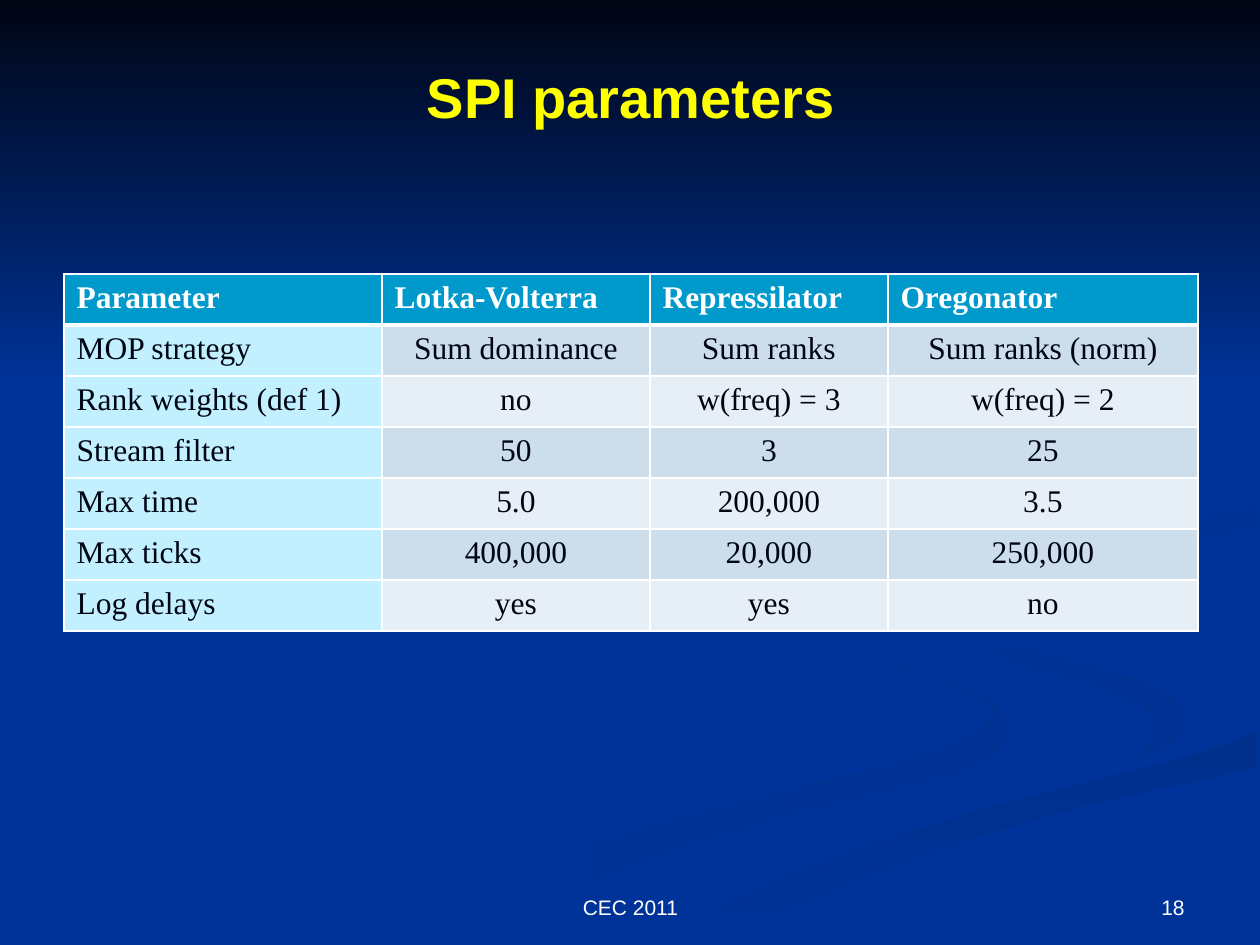
"""Build the SPI parameters slide: a table over a blue background with ribbons."""
from lxml import etree
from pptx import Presentation
from pptx.dml.color import RGBColor
from pptx.enum.text import MSO_ANCHOR, PP_ALIGN
from pptx.oxml.ns import qn
from pptx.util import Pt

PX = 914400 / 126
WIDTH, HEIGHT = 1260, 945
LEFT, CENTER, RIGHT = PP_ALIGN.LEFT, PP_ALIGN.CENTER, PP_ALIGN.RIGHT
MIDDLE, BOTTOM = MSO_ANCHOR.MIDDLE, MSO_ANCHOR.BOTTOM

BLUE = RGBColor(0x00, 0x33, 0x99)
NIGHT = RGBColor(0x00, 0x05, 0x14)
YELLOW = RGBColor(0xFF, 0xFF, 0x00)
WHITE = RGBColor(0xFF, 0xFF, 0xFF)
TEAL = RGBColor(0x00, 0x99, 0xCC)
ICE = RGBColor(0xC2, 0xF0, 0xFF)
BANDS = (RGBColor(0xCC, 0xDE, 0xEC), RGBColor(0xE7, 0xEF, 0xF6))

TITLE = {"name": "Arial", "size": Pt(32), "bold": True}
SMALL = {"name": "Arial", "size": Pt(12), "bold": False}
HEAD = {"name": "Times New Roman", "size": Pt(18), "bold": True}
BODY = {**HEAD, "bold": False}

COLS = (318, 268, 238, 310)
ROW = 51
ROWS = (
    ("Parameter", "Lotka-Volterra", "Repressilator", "Oregonator"),
    ("MOP strategy", "Sum dominance", "Sum ranks", "Sum ranks (norm)"),
    ("Rank weights (def 1)", "no", "w(freq) = 3", "w(freq) = 2"),
    ("Stream filter", "50", "3", "25"),
    ("Max time", "5.0", "200,000", "3.5"),
    ("Max ticks", "400,000", "20,000", "250,000"),
    ("Log delays", "yes", "yes", "no"),
)

LONG = (
    (984, 697), (954, 684), (901, 665), (859, 654), (809, 639), (774, 625),
    (740, 606), (726, 591), (725, 578), (718, 592), (726, 605), (747, 619),
    (795, 636), (856, 654), (900, 668), (948, 684), (978, 697), (987, 704),
    (990, 713), (987, 723), (975, 735), (956, 743), (916, 759), (862, 772),
    (776, 793), (679, 818), (577, 849), (474, 891), (378, 944), (455, 944),
    (543, 900), (629, 866), (711, 838), (785, 815), (852, 799), (908, 785),
    (953, 774), (983, 762), (997, 752), (1004, 741), (1008, 732),
    (1007, 722), (998, 707),
)
HOOK = (
    (1188, 718), (1183, 708), (1172, 697), (1140, 680), (1096, 668),
    (1046, 654), (998, 641), (955, 627), (924, 609), (912, 585), (916, 604),
    (931, 622), (965, 645), (1004, 660), (1056, 675), (1094, 685),
    (1124, 697), (1143, 708), (1153, 719), (1157, 732), (1152, 742),
    (1143, 752), (1126, 762), (1154, 752), (1174, 742), (1186, 732),
)
SWEEP = (
    (654, 941), (634, 944), (719, 944), (756, 924), (794, 906), (844, 885),
    (910, 859), (989, 833), (1085, 806), (1196, 781), (1257, 767),
    (1257, 732), (1230, 743), (1179, 759), (1092, 781), (1004, 804),
    (963, 815), (877, 843), (794, 873), (717, 906),
)
CURL = (
    (984, 580), (990, 597), (1016, 614), (1041, 625), (1019, 610),
    (1014, 595), (1028, 578), (1062, 564), (1129, 548), (1202, 537),
    (1257, 529), (1257, 507), (1218, 515), (1131, 527), (1070, 538),
    (1021, 551), (997, 563),
)
SKY = ((0, 0), (0, 388), (WIDTH, 388), (WIDTH, 0))
RIBBONS = (
    (LONG, BLUE, RGBColor(0x00, 0x31, 0x93), 0),
    (HOOK, BLUE, RGBColor(0x00, 0x31, 0x93), 315),
    (SWEEP, RGBColor(0x00, 0x2F, 0x8C), BLUE, 270),
    (CURL, RGBColor(0x00, 0x30, 0x91), BLUE, 315),
    (SKY, NIGHT, BLUE, 270),
)


def emu(px):
    """Turn px into EMU."""
    return round(px * PX)


def ribbon(slide, points, start, end, angle):
    """Draw a closed outline with a two-colour gradient."""
    pen = slide.shapes.build_freeform(*points[0], scale=PX)
    pen.add_line_segments(points[1:], close=True)
    shape = pen.convert_to_shape()
    shape.shadow.inherit = False
    shape.line.fill.background()
    shape.fill.gradient()
    shape.fill.gradient_angle = angle
    for stop, color in zip(shape.fill.gradient_stops, (start, end)):
        stop.color.rgb = color


def write(frame, text, look, color, align):
    """Put one formatted paragraph into a text frame."""
    para = frame.paragraphs[0]
    para.alignment = align
    run = para.add_run()
    run.text = text
    for key, value in look.items():
        setattr(run.font, key, value)
    run.font.color.rgb = color


def place(shape, box):
    """Set the position and size of a shape from px."""
    for key, value in zip(("left", "top", "width", "height"), box):
        setattr(shape, key, emu(value))


def label(slide, text, box, align):
    """Add a small footer text."""
    shape = slide.shapes.add_textbox(*map(emu, box))
    shape.text_frame.word_wrap = True
    shape.text_frame.vertical_anchor = BOTTOM
    write(shape.text_frame, text, SMALL, WHITE, align)


def edge(cell, top, bottom):
    """Give a cell white borders, with top and bottom widths in points."""
    props = cell._tc.get_or_add_tcPr()
    sides = (("a:lnL", 1), ("a:lnR", 1), ("a:lnT", top), ("a:lnB", bottom))
    for spot, (tag, width) in enumerate(sides):
        line = etree.Element(qn(tag), w=str(Pt(width)))
        fill = etree.SubElement(line, qn("a:solidFill"))
        etree.SubElement(fill, qn("a:srgbClr"), val=str(WHITE))
        props.insert(spot, line)


def grid(slide, left, top):
    """Add the parameter table."""
    box = (left, top, sum(COLS), ROW * len(ROWS))
    table = slide.shapes.add_table(len(ROWS), len(COLS), *map(emu, box)).table
    for col, width in zip(table.columns, COLS):
        col.width = emu(width)
    for r, texts in enumerate(ROWS):
        table.rows[r].height = emu(ROW)
        look, color = (BODY, NIGHT) if r else (HEAD, WHITE)
        for c, text in enumerate(texts):
            cell = table.cell(r, c)
            cell.fill.solid()
            band = BANDS[(r - 1) % 2] if c else ICE
            cell.fill.fore_color.rgb = band if r else TEAL
            write(cell.text_frame, text, look, color, CENTER if r and c else LEFT)
            edge(cell, 3 if r == 1 else 1, 1 if r else 3)


def main():
    """Build and save the slide."""
    deck = Presentation()
    deck.slide_width, deck.slide_height = emu(WIDTH), emu(HEIGHT)
    slide = deck.slides.add_slide(deck.slide_layouts[5])
    slide.background.fill.solid()
    slide.background.fill.fore_color.rgb = BLUE
    for item in RIBBONS:
        ribbon(slide, *item)
    title = slide.shapes.title
    place(title, (64, 27, 1134, 138))
    title.text_frame.vertical_anchor = MIDDLE
    write(title.text_frame, "SPI parameters", TITLE, YELLOW, CENTER)
    slide.shapes._spTree.append(title._element)
    grid(slide, 64, 274)
    label(slide, "18", (903, 861, 294, 65), RIGHT)
    label(slide, "CEC 2011", (431, 861, 399, 65), CENTER)
    deck.save("out.pptx")


if __name__ == "__main__":
    main()
